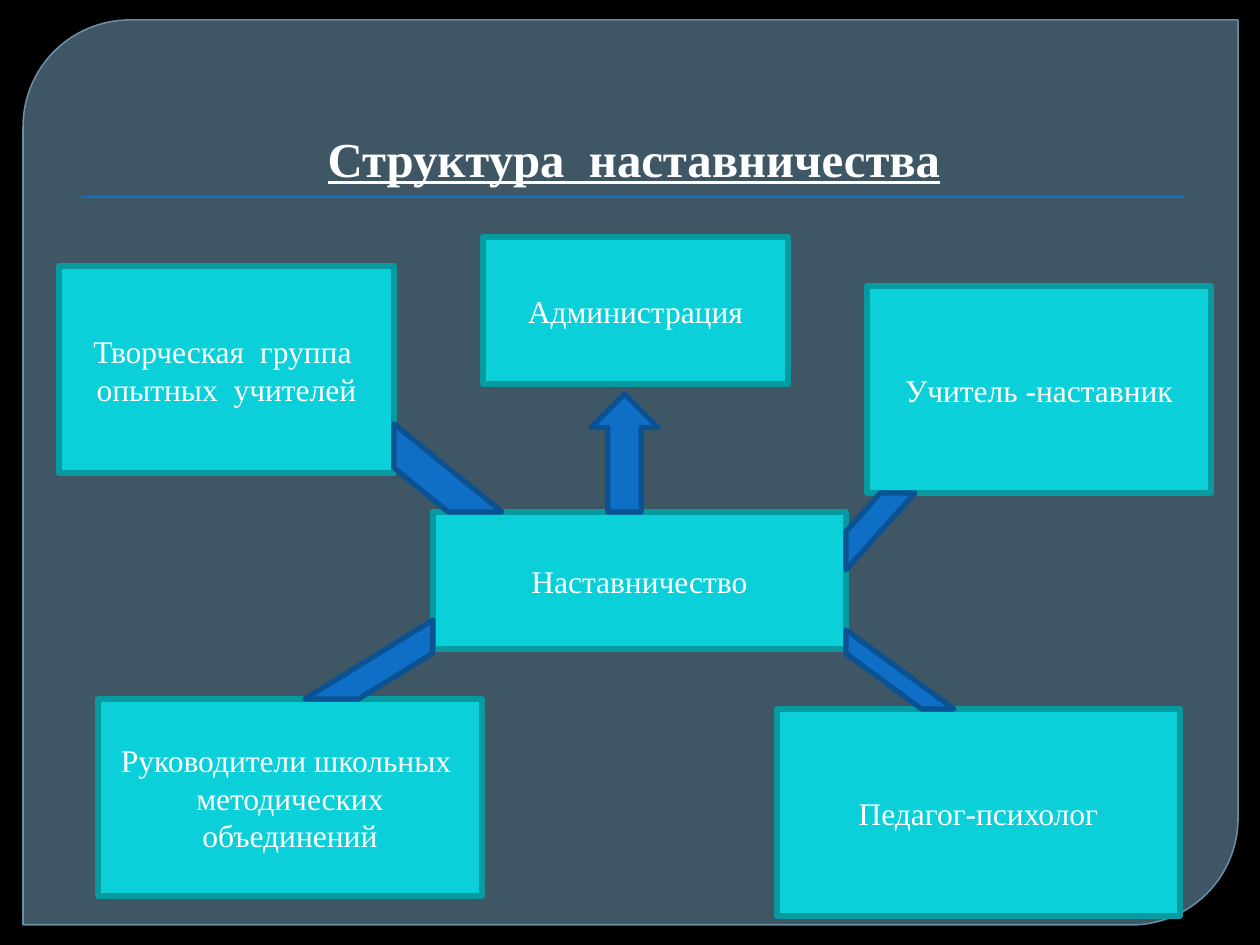
import pptx
import pptx.util
import pptx.dml.color
import pptx.enum.shapes
import pptx.enum.text
import pptx.oxml.ns
import lxml.etree

PX = 914400 / 126
FONT = "Times New Roman"
COLORS = {
    "background": "000000",
    "panel": "61869C",
    "panel_line": "779BB2",
    "box": "0BD0D9",
    "box_line": "089AA1",
    "link": "0F6FC6",
    "link_line": "0B5292",
    "text": "FFFFFF",
}
SHAPES = pptx.enum.shapes.MSO_SHAPE
ANCHORS = pptx.enum.text.MSO_ANCHOR


def emu(box):
    """Turn px lengths into EMU."""
    return [pptx.util.Emu(round(v * PX)) for v in box]


def rgb(name):
    """Look up a named colour."""
    return pptx.dml.color.RGBColor.from_string(COLORS[name])


def set_alpha(fill_parent, percent):
    """Make the solid fill directly under an element translucent."""
    qn = pptx.oxml.ns.qn
    color = fill_parent.find(qn("a:solidFill")).find(qn("a:srgbClr"))
    lxml.etree.SubElement(color, qn("a:alpha"), val=str(percent * 1000))


def add_shape(slide, kind, box, fill, line=None, width=3, adj=()):
    """Add a flat preset shape."""
    s = slide.shapes.add_shape(kind, *emu(box))
    s.shadow.inherit = False
    s.fill.solid()
    s.fill.fore_color.rgb = rgb(fill)
    if line:
        s.line.color.rgb = rgb(line)
        s.line.width = pptx.util.Pt(width)
    else:
        s.line.fill.background()
    for i, value in enumerate(adj):
        s.adjustments[i] = value
    return s


def write(tf, lines, size, anchor, bold=None, underline=None):
    """Write centred paragraphs into a text frame."""
    tf.word_wrap = True
    tf.vertical_anchor = anchor
    for i, line in enumerate(lines):
        p = tf.add_paragraph() if i else tf.paragraphs[0]
        p.alignment = pptx.enum.text.PP_ALIGN.CENTER
        r = p.add_run()
        r.text = line
        r.font.name = FONT
        r.font.size = pptx.util.Pt(size)
        r.font.color.rgb = rgb("text")
        r.font.bold = bold
        r.font.underline = underline


def add_panel(slide, box):
    """Draw the rounded backdrop and the rule under the title."""
    x, y, w, h = box
    s = add_shape(slide, SHAPES.ROUND_2_DIAG_RECTANGLE, box,
                  "panel", "panel_line", 0.87, (0.118, 0))
    set_alpha(s.fill._xPr, 65)
    set_alpha(s.line._ln, 88)
    add_shape(slide, SHAPES.RECTANGLE, (x + 58, y + 176, w - 112, 2), "link")


def add_title(slide, box):
    """Place the underlined heading at the foot of its box."""
    tf = slide.shapes.add_textbox(*emu(box)).text_frame
    write(tf, ["Структура  наставничества"], 27.9, ANCHORS.BOTTOM, True, True)


def add_role(slide, box, lines):
    """Add one labelled box of the scheme."""
    s = add_shape(slide, SHAPES.RECTANGLE, box, "box", "box_line")
    write(s.text_frame, lines, 18, ANCHORS.MIDDLE)


def add_stripe(slide, box, adj=0.5, flips=()):
    """Add a diagonal link between two boxes."""
    s = add_shape(slide, SHAPES.DIAGONAL_STRIPE, box,
                  "link", "link_line", adj=(adj,))
    for flip in flips:
        s._element.spPr.xfrm.set(flip, "1")


def add_scheme(slide, box):
    """Place the roles around the central box and link them to it."""
    x, y, w, h = box
    roles = [
        ((0, 0, w, h), ["Наставничество"]),
        ((-374, -246, 335, 207), ["Творческая  группа  опытных  учителей"]),
        ((434, -226, 344, 207), ["Учитель -наставник"]),
        ((-335, 187, 384, 197),
         ["Руководители школьных  методических", "объединений"]),
        ((344, 197, 403, 207), ["Педагог-психолог"]),
        ((50, -275, 305, 147), ["Администрация"]),
    ]
    stripes = [
        ((-128, 108, 128, 79), 0.58, ("flipH", "flipV")),
        ((w, 118, 108, 79), 0.7, ("flipV",)),
        ((w, -19, 69, 77), 0.5, ()),
        ((-39, -88, 108, 88), 0.5, ("flipV",)),
    ]
    for (dx, dy, rw, rh), lines in roles:
        add_role(slide, (x + dx, y + dy, rw, rh), lines)
    add_shape(slide, SHAPES.UP_ARROW, (x + 158, y - 118, 67, 118),
              "link", "link_line")
    for (dx, dy, sw, sh), adj, flips in stripes:
        add_stripe(slide, (x + dx, y + dy, sw, sh), adj, flips)


def main():
    """Build the slide and save it."""
    prs = pptx.Presentation()
    prs.slide_width, prs.slide_height = emu((1260, 945))
    slide = prs.slides.add_slide(prs.slide_layouts[6])
    slide.background.fill.solid()
    slide.background.fill.fore_color.rgb = rgb("background")
    add_panel(slide, (23, 20, 1215, 905))
    add_title(slide, (67, 35, 1134, 158))
    add_scheme(slide, (433, 512, 413, 137))
    prs.save("out.pptx")


if __name__ == "__main__":
    main()
